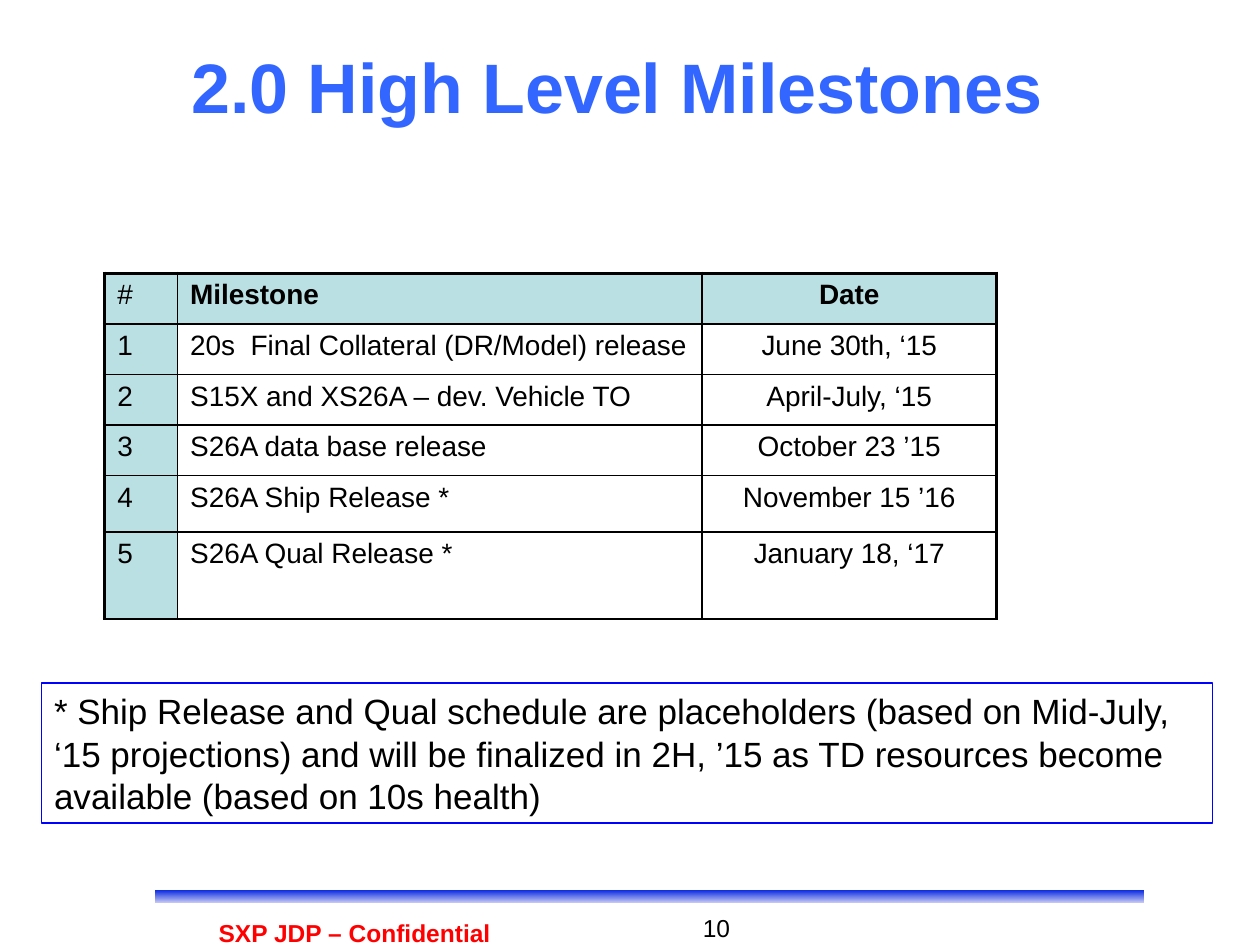
import pptx
import pptx.dml.color
import pptx.enum.dml
import pptx.enum.shapes
import pptx.enum.text
import pptx.oxml.ns
import pptx.util
from lxml import etree

Cm = pptx.util.Cm
Pt = pptx.util.Pt
Align = pptx.enum.text.PP_ALIGN
Anchor = pptx.enum.text.MSO_ANCHOR
Rectangle = pptx.enum.shapes.MSO_SHAPE.RECTANGLE

COLORS = {
    "title": "3366FF",
    "text": "000000",
    "header": "BBE0E3",
    "white": "FFFFFF",
    "note_line": "0000FF",
    "confidential": "FF0000",
    "bar_top": "0020E0",
    "bar_bottom": "DADAF6",
}
MILESTONES = [
    ("#", "Milestone", "Date"),
    ("1", "20s  Final Collateral (DR/Model) release", "June 30th, ‘15"),
    ("2", "S15X and XS26A – dev. Vehicle TO", "April-July, ‘15"),
    ("3", "S26A data base release", "October 23 ’15"),
    ("4", "S26A Ship Release *", "November 15 ’16"),
    ("5", "S26A Qual Release *", "January 18, ‘17"),
]
COLUMN_WIDTHS = [1.47, 10.57, 5.94]
ROW_HEIGHTS = [1.02] * 4 + [1.14, 1.75]


def rgb(name):
    return pptx.dml.color.RGBColor.from_string(COLORS[name])


def write(frame, text, size, color="text", bold=False, align=Align.LEFT):
    paragraph = frame.paragraphs[0]
    paragraph.text = text
    paragraph.alignment = align
    font = paragraph.font
    font.name = "Arial"
    font.size = Pt(size)
    font.bold = bold
    font.color.rgb = rgb(color)


def add_text(slide, box, text, size, anchor=Anchor.TOP, **style):
    frame = slide.shapes.add_textbox(*map(Cm, box)).text_frame
    frame.word_wrap = True
    frame.vertical_anchor = anchor
    write(frame, text, size, **style)


def set_border(cell, side, width):
    qn = pptx.oxml.ns.qn
    line = etree.SubElement(
        cell._tc.get_or_add_tcPr(), qn(f"a:ln{side}"), w=str(Pt(width))
    )
    fill = etree.SubElement(line, qn("a:solidFill"))
    etree.SubElement(fill, qn("a:srgbClr"), val=COLORS["text"])


def add_title(slide, box):
    add_text(slide, box, "2.0 High Level Milestones", 40, Anchor.MIDDLE,
             color="title", bold=True, align=Align.CENTER)


def add_milestones(slide, left, top):
    box = (left, top, sum(COLUMN_WIDTHS), sum(ROW_HEIGHTS))
    table = slide.shapes.add_table(
        len(MILESTONES), len(COLUMN_WIDTHS), *map(Cm, box)
    ).table
    for column, width in zip(table.columns, COLUMN_WIDTHS):
        column.width = Cm(width)
    last = len(COLUMN_WIDTHS) - 1
    for r, (entries, height) in enumerate(zip(MILESTONES, ROW_HEIGHTS)):
        table.rows[r].height = Cm(height)
        for c, entry in enumerate(entries):
            cell = table.cell(r, c)
            outer = {"L": c == 0, "R": c == last, "T": r == 0, "B": False}
            for side, thick in outer.items():
                set_border(cell, side, 2.25 if thick else 1)
            cell.fill.solid()
            cell.fill.fore_color.rgb = rgb("header" if r == 0 or c == 0 else "white")
            write(cell.text_frame, entry, 16, bold=r == 0 and c > 0,
                  align=Align.CENTER if c == last else Align.LEFT)


def add_note(slide, box):
    note = slide.shapes.add_shape(Rectangle, *map(Cm, box))
    note.shadow.inherit = False
    note.fill.background()
    note.line.color.rgb = rgb("note_line")
    note.line.width = Pt(0.75)
    note.text_frame.word_wrap = True
    write(
        note.text_frame,
        "* Ship Release and Qual schedule are placeholders (based on Mid-July, "
        "‘15 projections) and will be finalized in 2H, ’15 as TD resources become "
        "available (based on 10s health)",
        20,
    )


def add_footer(slide, left, top, width):
    bar = slide.shapes.add_shape(Rectangle, Cm(left), Cm(top), Cm(width), Cm(0.3))
    bar.shadow.inherit = False
    bar.fill.gradient()
    bar.fill.gradient_angle = 270
    for stop, color in zip(bar.fill.gradient_stops, ("bar_top", "bar_bottom")):
        stop.color.rgb = rgb(color)
    bar.line.color.rgb = rgb("white")
    bar.line.width = Pt(1)
    add_text(slide, (left, top + 0.46, 8.1, 0.66), "SXP JDP – Confidential", 14,
             color="confidential", bold=True, align=Align.CENTER)
    add_text(slide, (left + 8.97, top + 0.36, 2.9, 0.69), "10", 14, align=Align.RIGHT)


def main():
    presentation = pptx.Presentation()
    presentation.slide_width = Cm(25.4)
    presentation.slide_height = Cm(19.05)
    slide = presentation.slides.add_slide(presentation.slide_layouts[6])
    add_footer(slide, 3.1, 17.93, 19.99)
    add_title(slide, (-0.05, 0.86, 24.97, 1.73))
    add_milestones(slide, 2.11, 5.51)
    add_note(slide, (0.84, 13.77, 23.6, 2.82))
    presentation.save("out.pptx")


if __name__ == "__main__":
    main()
